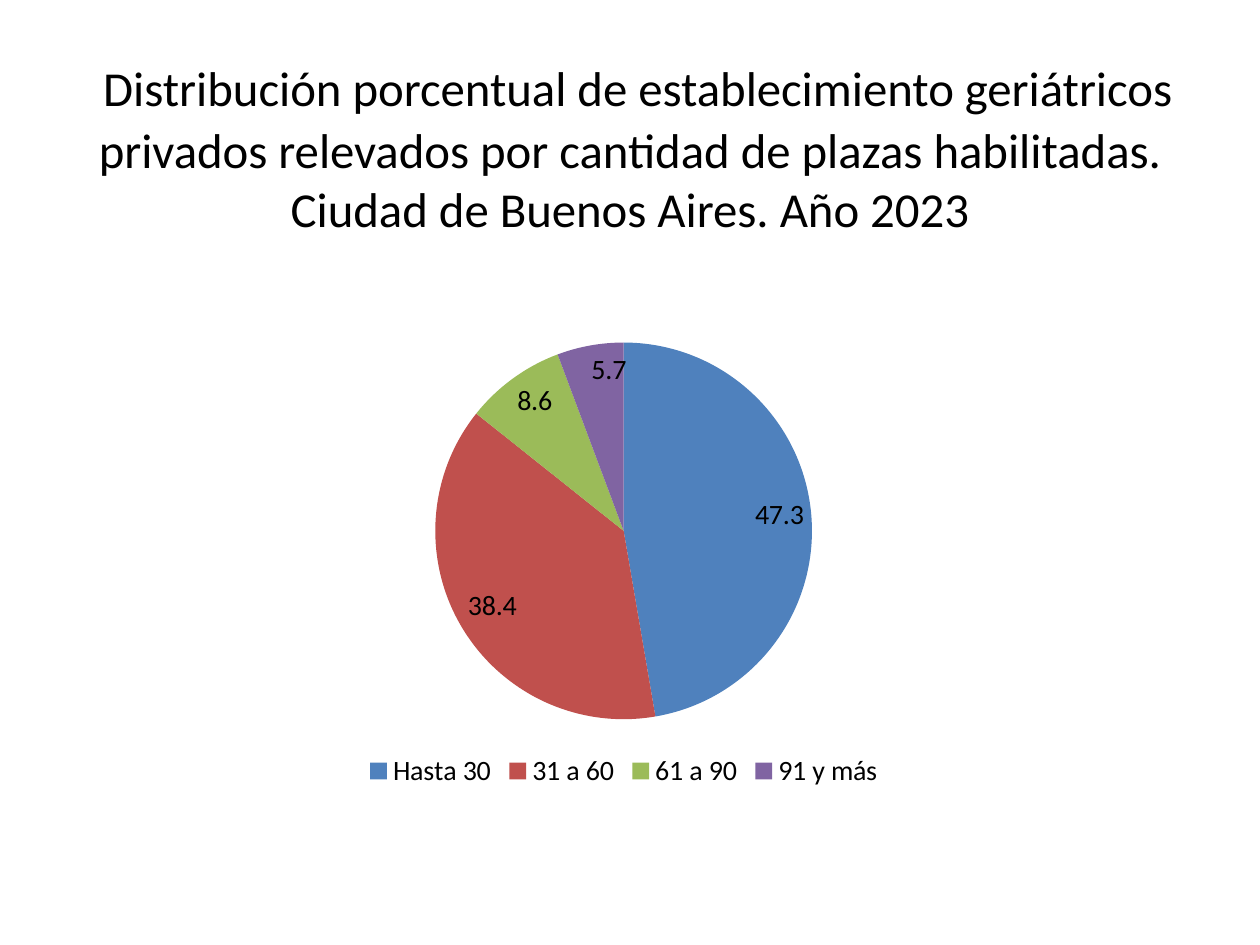
"""Build a slide with a pie chart of private care homes by licensed places."""
import pptx
import pptx.chart.data
import pptx.dml.color
import pptx.enum.chart
import pptx.enum.text
import pptx.oxml
import pptx.oxml.ns
import pptx.util

TITLE_RUNS = [
    (" ", 39.6),
    ("Distribución porcentual de establecimiento geriátricos privados relevados "
     "por cantidad de plazas habilitadas. Ciudad de Buenos Aires. Año 2023", 27.9),
]
SHARES = [
    ("Hasta 30", 47.3, "blue"),
    ("31 a 60", 38.4, "red"),
    ("61 a 90", 8.6, "green"),
    ("91 y más", 5.7, "purple"),
]
COLORS = {"text": "000000", "blue": "4F81BD", "red": "C0504D",
          "green": "9BBB59", "purple": "8064A2"}
FONT = "Calibri"
SLIDE_SIZE = (10, 7.5)
TITLE_BOX = (0.05, 0.04, 0.9, 0.21)
CHART_BOX = (0.17, 0.3, 0.65, 0.54)
PIE_LAYOUT = {"x": 0.27, "y": 0.11, "w": 0.46, "h": 0.75}


def color(name):
    """Return the named colour."""
    return pptx.dml.color.RGBColor.from_string(COLORS[name])


def place(box):
    """Turn shares of the slide into left, top, width and height."""
    return [pptx.util.Inches(share * SLIDE_SIZE[index % 2])
            for index, share in enumerate(box)]


def apply_format(target, values):
    """Set each attribute in values on the target."""
    for name, value in values.items():
        setattr(target, name, value)


def style_font(font, size):
    """Apply the slide's font at the given size."""
    apply_format(font, {"name": FONT, "size": pptx.util.Pt(size)})
    font.color.rgb = color("text")


def add_title(slide):
    """Add the centred title."""
    frame = slide.shapes.add_textbox(*place(TITLE_BOX)).text_frame
    apply_format(frame, {"word_wrap": True,
                         "vertical_anchor": pptx.enum.text.MSO_ANCHOR.MIDDLE})
    paragraph = frame.paragraphs[0]
    paragraph.alignment = pptx.enum.text.PP_ALIGN.CENTER
    for text, size in TITLE_RUNS:
        run = paragraph.add_run()
        run.text = text
        style_font(run.font, size)


def set_pie_layout(chart):
    """Fix the pie's area as shares of the chart."""
    plot_area = chart.plots[0]._element.getparent()
    for old in plot_area.findall(pptx.oxml.ns.qn("c:layout")):
        plot_area.remove(old)
    modes = '<c:layoutTarget val="inner"/><c:xMode val="edge"/><c:yMode val="edge"/>'
    sides = "".join(f'<c:{side} val="{share}"/>' for side, share in PIE_LAYOUT.items())
    plot_area.insert(0, pptx.oxml.parse_xml(
        f'<c:layout {pptx.oxml.ns.nsdecls("c")}><c:manualLayout>'
        f"{modes}{sides}</c:manualLayout></c:layout>"))


def add_pie(slide):
    """Add the pie chart with its legend and value labels."""
    categories, values, fills = zip(*SHARES)
    data = pptx.chart.data.CategoryChartData()
    data.categories = categories
    data.add_series("Series 1", values)
    chart = slide.shapes.add_chart(
        pptx.enum.chart.XL_CHART_TYPE.PIE, *place(CHART_BOX), data).chart
    apply_format(chart, {"has_title": False, "has_legend": True})
    style_font(chart.font, 16)
    apply_format(chart.legend, {
        "position": pptx.enum.chart.XL_LEGEND_POSITION.BOTTOM,
        "include_in_layout": False})
    plot = chart.plots[0]
    apply_format(plot, {"vary_by_categories": True, "has_data_labels": True})
    apply_format(plot.data_labels, {
        "show_value": True, "show_percentage": False,
        "number_format": "0.0", "number_format_is_linked": False,
        "position": pptx.enum.chart.XL_LABEL_POSITION.INSIDE_END})
    style_font(plot.data_labels.font, 16)
    for index, name in enumerate(fills):
        fill = plot.series[0].points[index].format.fill
        fill.solid()
        fill.fore_color.rgb = color(name)
    set_pie_layout(chart)


def main():
    """Create and save the presentation."""
    presentation = pptx.Presentation()
    width, height = map(pptx.util.Inches, SLIDE_SIZE)
    apply_format(presentation, {"slide_width": width, "slide_height": height})
    slide = presentation.slides.add_slide(presentation.slide_layouts[6])
    add_title(slide)
    add_pie(slide)
    presentation.save("out.pptx")


if __name__ == "__main__":
    main()
